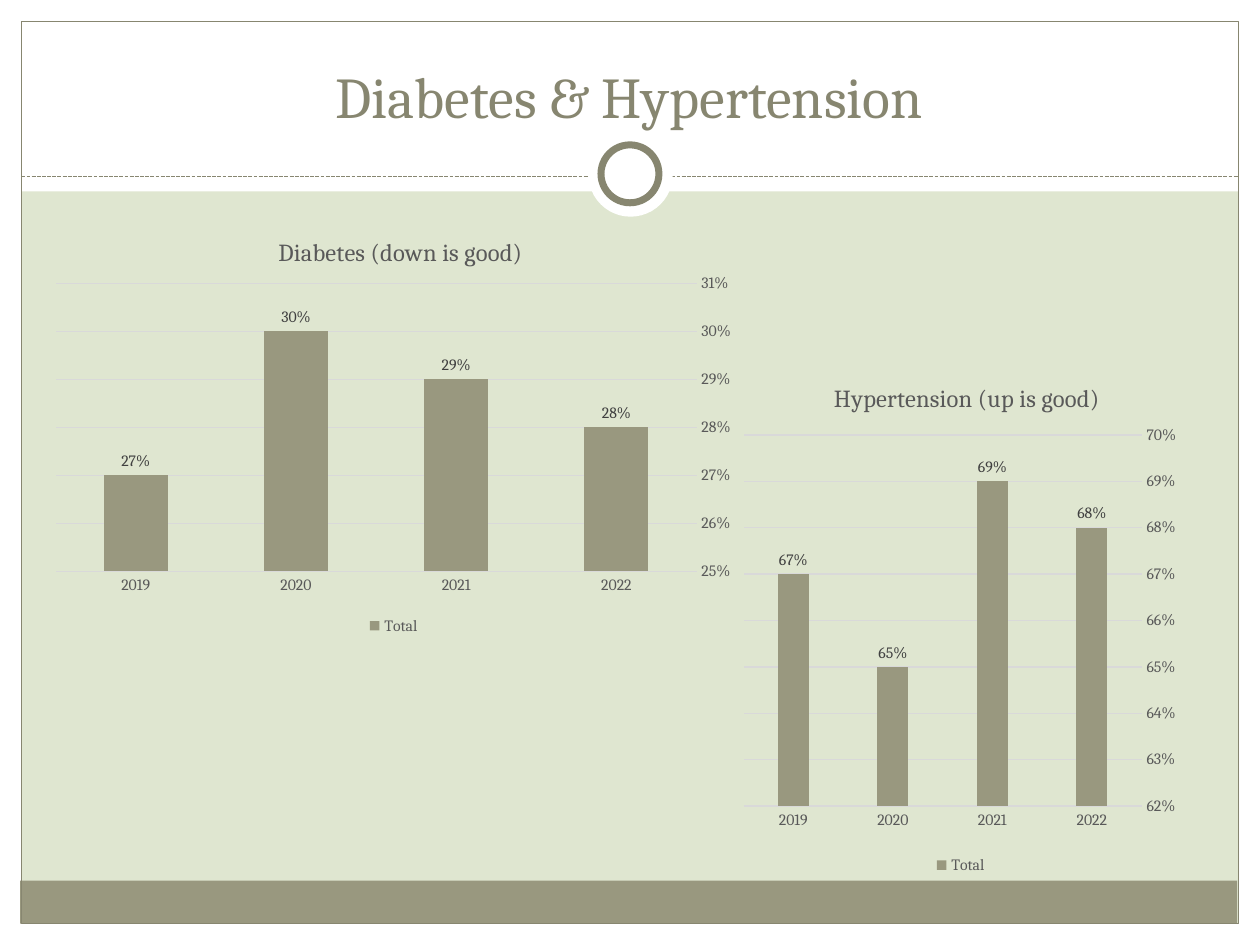
from lxml import etree
from pptx import Presentation
from pptx.chart.data import CategoryChartData
from pptx.dml.color import RGBColor
from pptx.enum.chart import XL_CHART_TYPE, XL_LABEL_POSITION, XL_LEGEND_POSITION, XL_TICK_MARK
from pptx.enum.dml import MSO_LINE
from pptx.enum.shapes import MSO_CONNECTOR, MSO_SHAPE
from pptx.enum.text import MSO_ANCHOR, PP_ALIGN
from pptx.oxml import parse_xml
from pptx.oxml.ns import nsdecls, qn
from pptx.util import Inches, Pt

RECT, OVAL = MSO_SHAPE.RECTANGLE, MSO_SHAPE.OVAL
COLUMNS = XL_CHART_TYPE.COLUMN_CLUSTERED
NO_TICK = XL_TICK_MARK.NONE

FONT = "Cambria"
WHITE = RGBColor(0xFF, 0xFF, 0xFF)
BLACK = RGBColor(0, 0, 0)
SAGE = RGBColor(0xDF, 0xE6, 0xD0)
OLIVE = RGBColor(0x99, 0x98, 0x7F)
DARK_OLIVE = RGBColor(0x87, 0x86, 0x70)
GREY = RGBColor(0x59, 0x59, 0x59)
LABEL_GREY = RGBColor(0x40, 0x40, 0x40)
GRID_GREY = RGBColor(0xD9, 0xD9, 0xD9)

YEARS = ["2022", "2021", "2020", "2019"]


def set_font(font, size, color):
    font.name = FONT
    font.size = Pt(size)
    font.bold = False
    font.color.rgb = color


def set_layout(parent, index, **fractions):
    """Place a chart part by fractions of the chart's size."""
    for old in parent.findall(qn("c:layout")):
        parent.remove(old)
    layout = parse_xml(f"<c:layout {nsdecls('c')}><c:manualLayout/></c:layout>")
    settings = {"xMode": "edge", "yMode": "edge", **fractions}
    if "w" in fractions:
        settings = {"layoutTarget": "inner", **settings}
    for tag, value in settings.items():
        etree.SubElement(layout[0], qn(f"c:{tag}")).set("val", str(value))
    parent.insert(index, layout)


class SlideBuilder:
    def __init__(self, slide):
        self.slide = slide
        self.shapes = slide.shapes
        fill = slide.background.fill
        fill.solid()
        fill.fore_color.rgb = SAGE

    def shape(self, kind, box, fill=None, line=None, width=0.75):
        shape = self.shapes.add_shape(kind, *map(Inches, box))
        shape.shadow.inherit = False
        if fill is None:
            shape.fill.background()
        else:
            shape.fill.solid()
            shape.fill.fore_color.rgb = fill
        if line is None:
            shape.line.fill.background()
        else:
            shape.line.color.rgb = line
            shape.line.width = Pt(width)

    def dashed_rule(self, left, right, y):
        rule = self.shapes.add_connector(
            MSO_CONNECTOR.STRAIGHT, Inches(left), Inches(y), Inches(right), Inches(y))
        rule.line.color.rgb = DARK_OLIVE
        rule.line.width = Pt(0.75)
        rule.line.dash_style = MSO_LINE.SQUARE_DOT
        etree.SubElement(rule._element.spPr, qn("a:effectLst"))

    def title(self, text, box):
        title = self.shapes.title
        title.left, title.top, title.width, title.height = map(Inches, box)
        frame = title.text_frame
        frame.vertical_anchor = MSO_ANCHOR.BOTTOM
        paragraph = frame.paragraphs[0]
        paragraph.alignment = PP_ALIGN.CENTER
        run = paragraph.add_run()
        run.text = text
        set_font(run.font, 33, DARK_OLIVE)
        # Bring the title in front of the white band
        title._element.getparent().append(title._element)

    def column_chart(self, heading, box, values, scale, gap, overlap,
                     heading_at, plot_at, base_line):
        data = CategoryChartData(number_format="0%")
        data.categories = YEARS
        data.add_series("Total", values)
        chart = self.shapes.add_chart(COLUMNS, *map(Inches, box), data).chart
        set_font(chart.font, 10, BLACK)

        # Heading
        chart.has_title = True
        run = chart.chart_title.text_frame.paragraphs[0].add_run()
        run.text = heading
        set_font(run.font, 14, GREY)
        set_layout(chart.chart_title._element, 1, **heading_at)
        set_layout(chart._chartSpace.chart.plotArea, 0, **plot_at)

        # Legend
        chart.has_legend = True
        chart.legend.position = XL_LEGEND_POSITION.BOTTOM
        chart.legend.include_in_layout = False
        set_font(chart.legend.font, 9, GREY)

        # Axes: years run right to left, so the scale stands on the right
        years, percent = chart.category_axis, chart.value_axis
        for axis in (years, percent):
            axis.major_tick_mark = axis.minor_tick_mark = NO_TICK
            set_font(axis.tick_labels.font, 9, GREY)
            axis.format.line.fill.background()
        years.reverse_order = True
        if base_line:
            years.format.line.color.rgb = GRID_GREY
            years.format.line.width = Pt(0.75)
        percent.minimum_scale, percent.maximum_scale = scale
        percent.major_unit = 0.01
        percent.tick_labels.number_format = "0%"
        percent.tick_labels.number_format_is_linked = False
        percent.has_major_gridlines = True
        percent.major_gridlines.format.line.color.rgb = GRID_GREY
        percent.major_gridlines.format.line.width = Pt(0.75)

        # Columns and their labels
        plot = chart.plots[0]
        plot.vary_by_categories = False
        plot.gap_width, plot.overlap = gap, overlap
        total = plot.series[0]
        total.format.fill.solid()
        total.format.fill.fore_color.rgb = OLIVE
        labels = total.data_labels
        labels.show_value = True
        labels.position = XL_LABEL_POSITION.OUTSIDE_END
        labels.number_format = "0%"
        labels.number_format_is_linked = False
        set_font(labels.font, 9, LABEL_GREY)


def main():
    prs = Presentation()
    prs.slide_width, prs.slide_height = Inches(10), Inches(7.5)
    page = SlideBuilder(prs.slides.add_slide(prs.slide_layouts[5]))

    # White margins and title band
    for margin in ((0, 7.33, 10, 0.17), (0, 0, 10, 1.52),
                   (0, 0, 0.17, 7.5), (9.83, 0, 0.17, 7.5)):
        page.shape(RECT, margin, fill=WHITE)

    # Footer bar, frame and ring on the dashed rule
    page.shape(RECT, (0.16, 6.99, 9.66, 0.34), fill=OLIVE)
    page.shape(RECT, (0.17, 0.17, 9.66, 7.16), line=DARK_OLIVE)
    page.dashed_rule(0.17, 9.83, 1.4)
    page.shape(OVAL, (4.67, 1.05, 0.67, 0.67), fill=WHITE)
    page.shape(OVAL, (4.77, 1.15, 0.46, 0.46), WHITE, DARK_OLIVE, 4)

    page.title("Diabetes & Hypertension", (0.33, 0.25, 9.33, 0.83))

    page.column_chart(
        "Diabetes (down is good)", (0.33, 1.67, 5.59, 3.41),
        (0.28, 0.29, 0.30, 0.27), scale=(0.25, 0.31), gap=150, overlap=0,
        heading_at={"x": 0.33, "y": 0.05},
        plot_at={"x": 0.02, "y": 0.17, "w": 0.91, "h": 0.67}, base_line=False)
    page.column_chart(
        "Hypertension (up is good)", (5.83, 2.83, 3.59, 4.15),
        (0.68, 0.69, 0.65, 0.67), scale=(0.62, 0.70), gap=219, overlap=-27,
        heading_at={"x": 0.21, "y": 0.04},
        plot_at={"x": 0.02, "y": 0.15, "w": 0.88, "h": 0.71}, base_line=True)

    prs.save("out.pptx")


if __name__ == "__main__":
    main()
